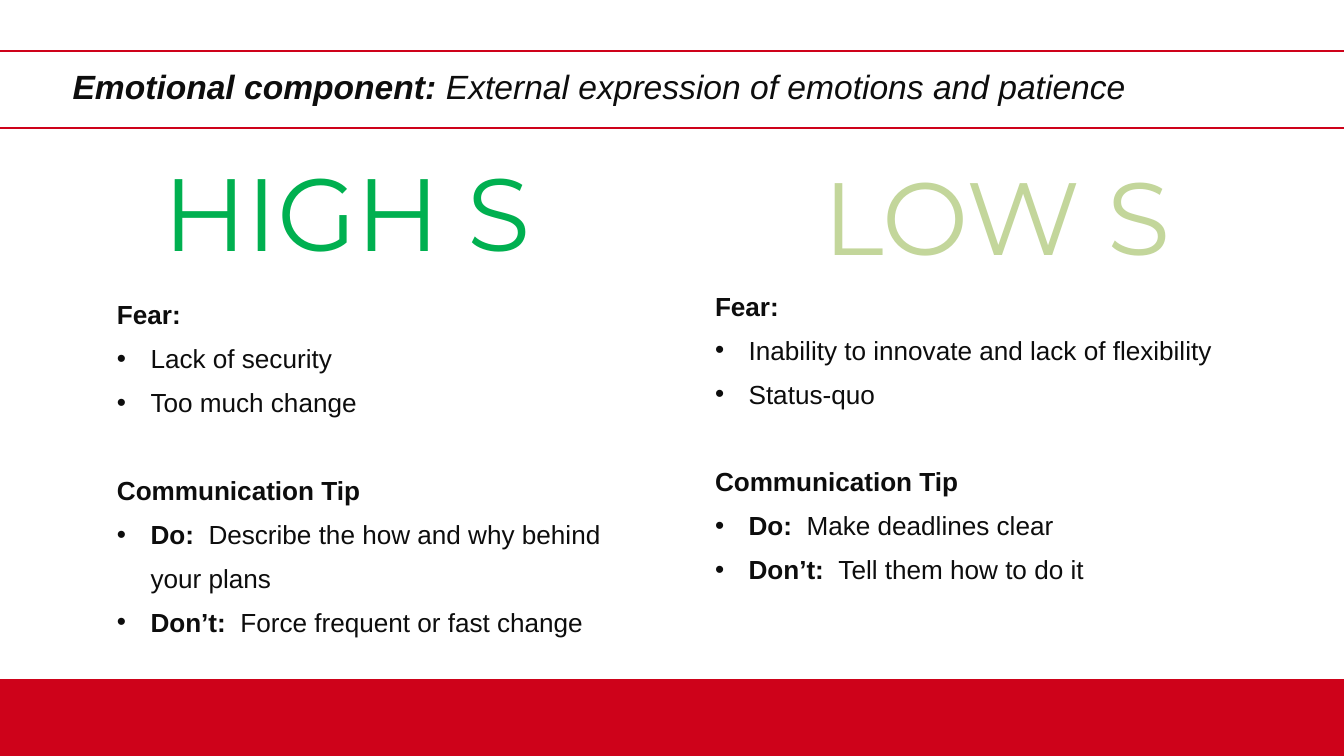
from dataclasses import dataclass

import pptx
import pptx.util
from lxml import etree
from pptx.dml.color import RGBColor
from pptx.enum.shapes import MSO_SHAPE
from pptx.enum.text import PP_ALIGN
from pptx.oxml.ns import qn
from pptx.util import Inches

RED = RGBColor(0xCE, 0x02, 0x1A)
INK = RGBColor(0x0D, 0x0D, 0x0D)
GREEN = RGBColor(0x00, 0xB0, 0x50)
PALE_GREEN = RGBColor(0xC3, 0xD6, 0x9B)

SECTION_GAP = 47


@dataclass
class Box:
    left: float
    top: float
    width: float
    height: float

    def lengths(self) -> list[Inches]:
        return [Inches(v) for v in (self.left, self.top, self.width, self.height)]


@dataclass
class Column:
    heading: str
    color: RGBColor
    heading_box: Box
    body_box: Box
    fears: list[str]
    do: str
    dont: str


# Both bands bleed over the slide edges
TITLE_BAND = Box(-1.76, 0.755, 22.76, 1.15)
FOOTER_BAND = Box(-1.02, 10.105, 22.76, 1.88)

COLUMNS = [
    Column("HIGH S", GREEN, Box(1.87, 2.4, 6.58, 1.67), Box(1.74, 4.26, 7.62, 5.2),
           ["Lack of security", "Too much change"],
           "Describe the how and why behind your plans",
           "Force frequent or fast change"),
    Column("LOW S", PALE_GREEN, Box(11.55, 2.46, 6.58, 1.67), Box(10.64, 4.13, 8.41, 4.54),
           ["Inability to innovate and lack of flexibility", "Status-quo"],
           "Make deadlines clear", "Tell them how to do it"),
]


def add_band(s, box: Box):
    band = s.shapes.add_shape(MSO_SHAPE.RECTANGLE, *box.lengths())
    band.shadow.inherit = False
    return band


def add_text_frame(s, box: Box):
    tf = s.shapes.add_textbox(*box.lengths()).text_frame
    tf.word_wrap = True
    tf.margin_left = tf.margin_right = tf.margin_top = tf.margin_bottom = 0
    return tf


def style(p, font: str, size: float, color: RGBColor, spacing) -> None:
    p.font.name = font
    p.font.size = pptx.util.Pt(size)
    p.font.color.rgb = color
    p.line_spacing = spacing


def add_runs(p, lead: str, rest: str) -> None:
    """Write a bold lead followed by regular text."""
    for text, bold in ((lead, True), (rest, False)):
        if text:
            r = p.add_run()
            r.text = text
            r.font.bold = bold


def add_bullet(p) -> None:
    pPr = p._p.get_or_add_pPr()
    pPr.set("marL", str(Inches(0.5)))
    pPr.set("indent", str(-Inches(0.5)))
    # Bullet settings belong before the default run properties
    defaults = pPr.find(qn("a:defRPr"))
    defaults.addprevious(etree.Element(qn("a:buFont"), typeface="Arial"))
    defaults.addprevious(etree.Element(qn("a:buChar"), char="•"))


def add_column(s, col: Column) -> None:
    p = add_text_frame(s, col.heading_box).paragraphs[0]
    p.text = col.heading
    p.alignment = PP_ALIGN.CENTER
    style(p, "Montserrat", 110, col.color, pptx.util.Pt(118.8))

    sections = [
        ("Fear:", [("", fear) for fear in col.fears]),
        ("Communication Tip", [("Do:  ", col.do), ("Don’t:  ", col.dont)]),
    ]
    tf = add_text_frame(s, col.body_box)
    for i, (title, items) in enumerate(sections):
        p = tf.add_paragraph() if i else tf.paragraphs[0]
        add_runs(p, title, "")
        style(p, "Arial", 28, INK, 1.4)
        if i:
            p.space_before = pptx.util.Pt(SECTION_GAP)
        for lead, rest in items:
            p = tf.add_paragraph()
            add_runs(p, lead, rest)
            style(p, "Arial", 28, INK, 1.4)
            add_bullet(p)


def main() -> None:
    prs = pptx.Presentation()
    prs.slide_width, prs.slide_height = Inches(20), Inches(11.25)
    s = prs.slides.add_slide(prs.slide_layouts[6])

    # Title in an outlined band
    band = add_band(s, TITLE_BAND)
    band.fill.background()
    band.line.color.rgb = RED
    band.line.width = pptx.util.Pt(2.25)
    p = add_text_frame(s, Box(1.08, 1.1, 16.29, 0.49)).paragraphs[0]
    add_runs(p, "Emotional component: ", "External expression of emotions and patience")
    style(p, "Arial", 36, INK, pptx.util.Pt(35))
    p.font.italic = True

    # Footer band
    band = add_band(s, FOOTER_BAND)
    band.fill.solid()
    band.fill.fore_color.rgb = RED
    band.line.fill.background()

    # High and low columns
    for col in COLUMNS:
        add_column(s, col)

    prs.save("out.pptx")


if __name__ == "__main__":
    main()
